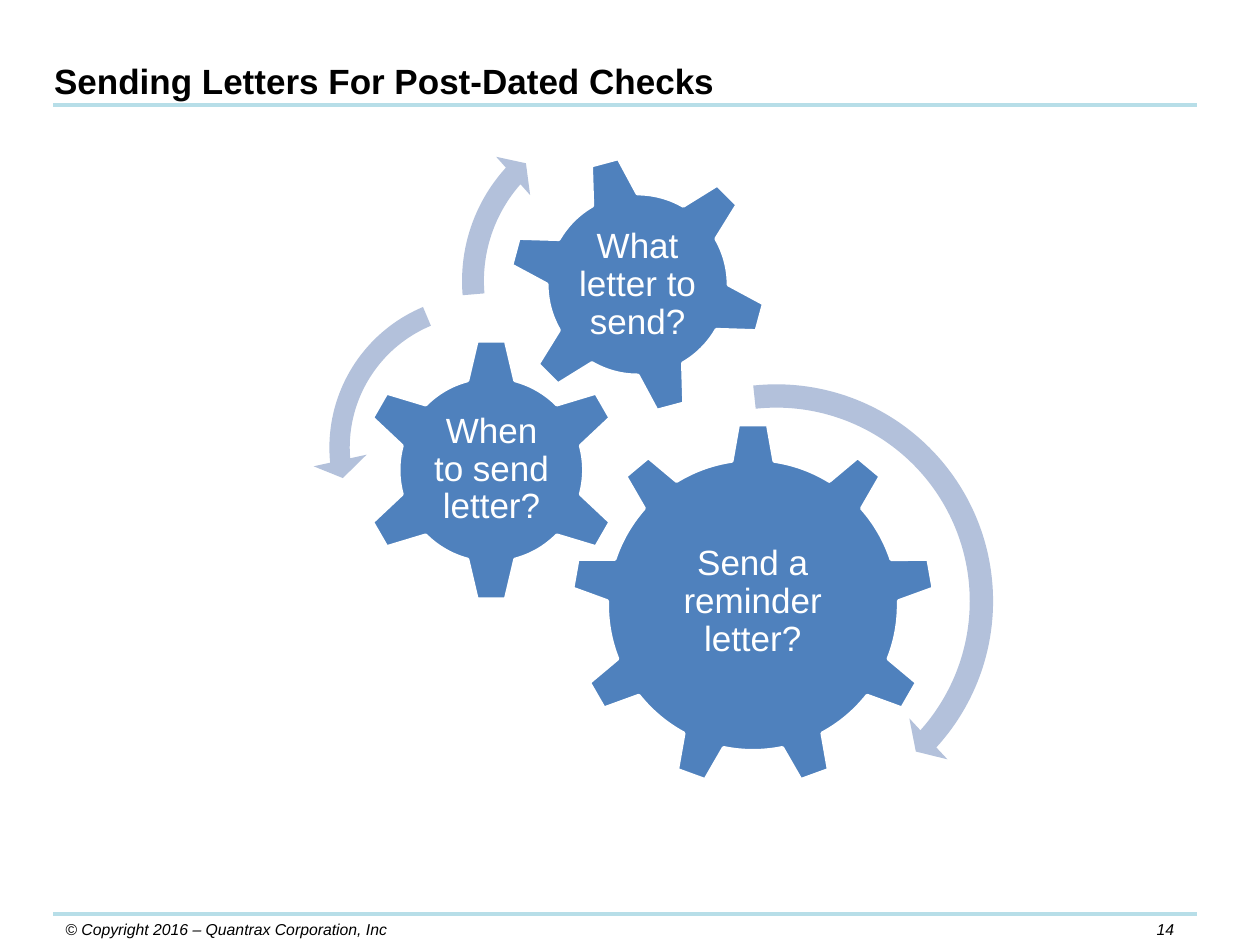
import lxml.etree
import pptx
import pptx.dml.color
import pptx.enum.shapes
import pptx.enum.text
import pptx.oxml.ns
import pptx.util

Cm = pptx.util.Cm
RGB = pptx.dml.color.RGBColor
SHAPE = pptx.enum.shapes.MSO_SHAPE
ALIGN = pptx.enum.text.PP_ALIGN
ANCHOR = pptx.enum.text.MSO_ANCHOR

BLACK = RGB(0x00, 0x00, 0x00)
WHITE = RGB(0xFF, 0xFF, 0xFF)
BLUE = RGB(0x4F, 0x81, 0xBD)
PALE = RGB(0xB3, 0xC1, 0xDB)
AQUA = RGB(0xB7, 0xDE, 0xE8)

LEFT, RIGHT = 1.07, 24.13
HEAD, FOOT = 2.11, 18.42

# Kind, (left, top, size), turn, text, (left, top, width, height) of the text
GEARS = [
    (SHAPE.GEAR_9, (11.51, 8.53, 7.34), 0,
     "Send a reminder letter?", (12.98, 10.26, 4.39, 3.76)),
    (SHAPE.GEAR_6, (7.24, 6.81, 5.33), 0,
     "When to send letter?", (8.59, 8.15, 2.64, 2.64)),
    (SHAPE.GEAR_6, (10.24, 3.12, 5.23), 345,
     "What letter to send?", (11.38, 4.27, 2.95, 2.95)),
]

# Kind, (left, top, size), adjustments
ARROWS = [
    (SHAPE.CIRCULAR_ARROW, (10.95, 7.42, 9.4),
     (0.05, 2.99, 25.29, 158.34, 0.06)),
    (SHAPE.LEFT_CIRCULAR_ARROW, (6.3, 5.61, 6.83),
     (0.06, 4.3, 104.89, 148.38, 0.08)),
    (SHAPE.CIRCULAR_ARROW, (9.02, 1.98, 7.37),
     (0.06, 3.94, 133.14, 105.08, 0.07)),
]


def add_text(slide, text, area, size=20, color=BLACK, bold=False,
             italic=False, align=ALIGN.LEFT, anchor=ANCHOR.TOP,
             inset=None, pitch=None):
    box = slide.shapes.add_textbox(*map(Cm, area))
    frame = box.text_frame
    frame.word_wrap = True
    frame.vertical_anchor = anchor
    if inset is not None:
        frame.margin_left = frame.margin_right = Cm(inset)
        frame.margin_top = frame.margin_bottom = Cm(inset)
    para = frame.paragraphs[0]
    para.alignment = align
    if pitch:
        para.line_spacing = pitch
    run = para.add_run()
    run.text = text
    font = run.font
    font.name, font.size = "Arial", pptx.util.Pt(size)
    font.bold, font.italic = bold, italic
    font.color.rgb = color


def add_rule(slide, y):
    line = slide.shapes.add_connector(
        pptx.enum.shapes.MSO_CONNECTOR.STRAIGHT,
        Cm(LEFT), Cm(y), Cm(RIGHT), Cm(y))
    line.line.color.rgb = AQUA
    line.line.width = pptx.util.Pt(2.25)
    props = line._element.spPr
    lxml.etree.SubElement(props, pptx.oxml.ns.qn("a:effectLst"))


def add_round(slide, kind, place, fill):
    left, top, size = map(Cm, place)
    shape = slide.shapes.add_shape(kind, left, top, size, size)
    shape.shadow.inherit = False
    shape.fill.solid()
    shape.fill.fore_color.rgb = fill
    return shape


def add_gear(slide, kind, place, turn, text, area):
    gear = add_round(slide, kind, place, BLUE)
    gear.rotation = turn
    gear.line.color.rgb = WHITE
    gear.line.width = pptx.util.Pt(2)
    add_text(slide, text, area, color=WHITE, align=ALIGN.CENTER,
             anchor=ANCHOR.MIDDLE, inset=0.07, pitch=0.9)


def add_arrow(slide, kind, place, bends):
    arrow = add_round(slide, kind, place, PALE)
    arrow.line.fill.background()
    for i, bend in enumerate(bends):
        arrow.adjustments[i] = bend


def main():
    deck = pptx.Presentation()
    deck.slide_width, deck.slide_height = Cm(25.4), Cm(19.05)
    slide = deck.slides.add_slide(deck.slide_layouts[6])

    # Header and footer
    add_rule(slide, HEAD)
    add_text(slide, "14", (22.86, FOOT, 1.27, 0.64), size=9, italic=True,
             align=ALIGN.CENTER)
    add_text(slide, "© Copyright 2016 – Quantrax Corporation, Inc",
             (LEFT, FOOT, 8.26, 0.64), size=9, italic=True)
    add_rule(slide, FOOT)
    add_text(slide, "Sending Letters For Post-Dated Checks",
             (0.84, 1.07, 18.62, 1.12), bold=True)

    # Gears, then the arrows that turn round them
    for gear in GEARS:
        add_gear(slide, *gear)
    for arrow in ARROWS:
        add_arrow(slide, *arrow)

    deck.save("out.pptx")


if __name__ == "__main__":
    main()
